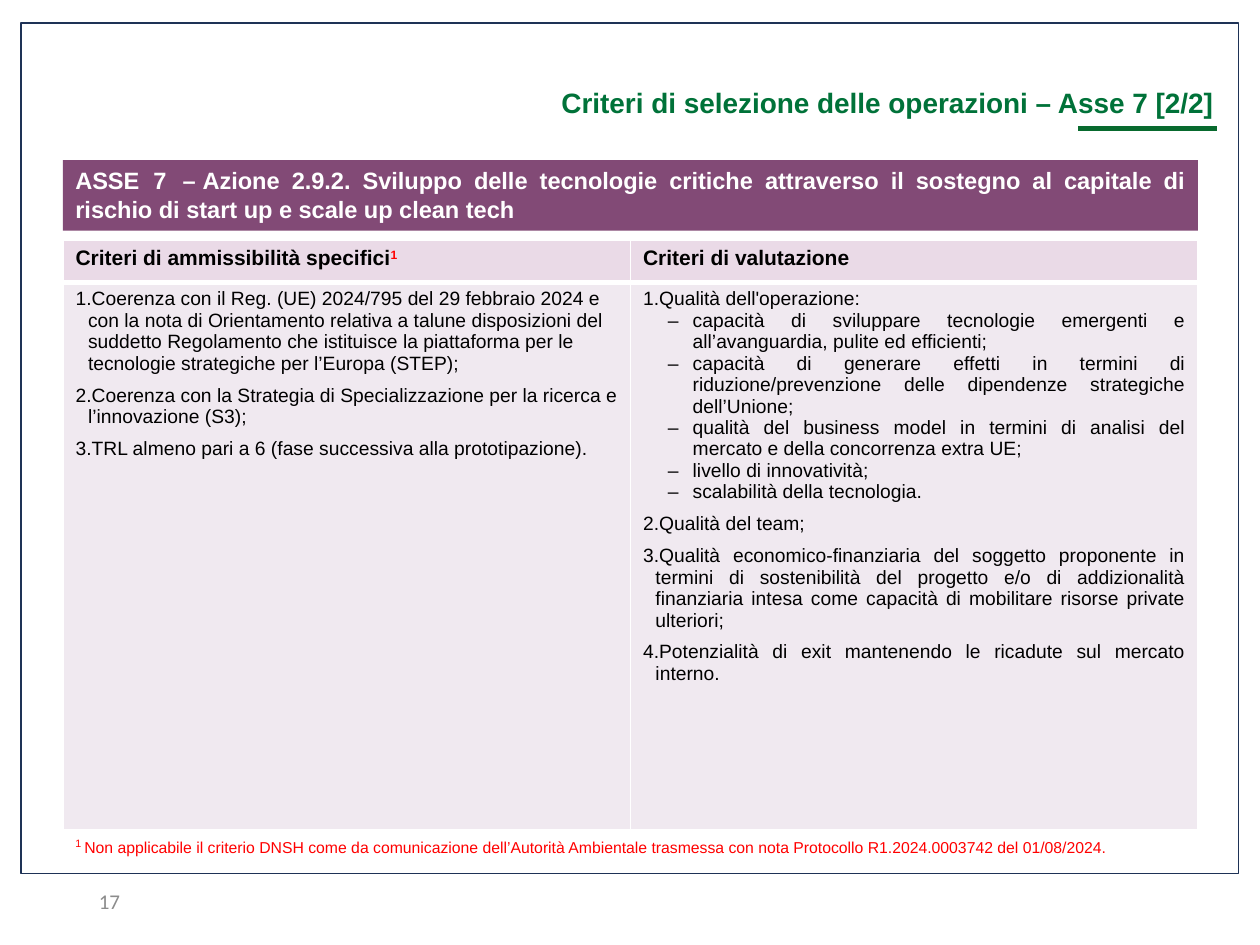
from lxml import etree
from pptx import Presentation
from pptx.dml.color import RGBColor
from pptx.enum.shapes import MSO_CONNECTOR, MSO_SHAPE
from pptx.enum.text import MSO_ANCHOR, PP_ALIGN
from pptx.oxml.ns import qn
from pptx.util import Cm, Pt

LEFT, RIGHT, JUST = PP_ALIGN.LEFT, PP_ALIGN.RIGHT, PP_ALIGN.JUSTIFY
TOP, MIDDLE = MSO_ANCHOR.TOP, MSO_ANCHOR.MIDDLE
RECT, LINE = MSO_SHAPE.RECTANGLE, MSO_CONNECTOR.STRAIGHT

COLORS = {
    "frame": "1E3256", "rule": "086A2E", "title": "007239", "band": "824A76",
    "head": "EADAE7", "body": "F0E9F0", "white": "FFFFFF", "black": "000000",
    "red": "FF0000", "gray": "8C8C8C",
}

# Criteria: (level, text, space after in points)
ENTRY = [
    (0, "Coerenza con il Reg. (UE) 2024/795 del 29 febbraio 2024 e con la nota di "
        "Orientamento relativa a talune disposizioni del suddetto Regolamento che "
        "istituisce la piattaforma per le tecnologie strategiche per l’Europa (STEP);", 6),
    (0, "Coerenza con la Strategia di Specializzazione per la ricerca e "
        "l’innovazione (S3);", 6),
    (0, "TRL almeno pari a 6 (fase successiva alla prototipazione).", 0),
]
RATING = [
    (0, "Qualità dell'operazione:", 0),
    (1, "capacità di sviluppare tecnologie emergenti e all’avanguardia, pulite ed "
        "efficienti;", 0),
    (1, "capacità di generare effetti in termini di riduzione/prevenzione delle "
        "dipendenze strategiche dell’Unione;", 0),
    (1, "qualità del business model in termini di analisi del mercato e della "
        "concorrenza extra UE;", 0),
    (1, "livello di innovatività;", 0),
    (1, "scalabilità della tecnologia.", 6),
    (0, "Qualità del team;", 6),
    (0, "Qualità economico-finanziaria del soggetto proponente in termini di "
        "sostenibilità del progetto e/o di addizionalità finanziaria intesa come "
        "capacità di mobilitare risorse private ulteriori;", 6),
    (0, "Potenzialità di exit mantenendo le ricadute sul mercato interno.", 0),
]


def color(name):
    return RGBColor.from_string(COLORS[name])


def style(para, size, tone, bold=False, align=LEFT, face="Arial"):
    para.alignment = align
    font = para.font
    font.name, font.size, font.bold = face, Pt(size), bold
    font.color.rgb = color(tone)


def add_run(para, text, **attrs):
    run = para.add_run()
    run.text = text
    for key, value in attrs.items():
        run._r.get_or_add_rPr().set(key, str(value))
    return run


def add_text(slide, box, anchor=TOP):
    frame = slide.shapes.add_textbox(*map(Cm, box)).text_frame
    frame.word_wrap = True
    frame.vertical_anchor = anchor
    return frame.paragraphs[0]


def add_rect(slide, box):
    shape = slide.shapes.add_shape(RECT, *map(Cm, box))
    shape.shadow.inherit = False
    return shape


def draw_frame(slide, box):
    x, y, w, h = box
    edge = add_rect(slide, box)
    edge.fill.background()
    edge.line.color.rgb = color("frame")
    edge.line.width = Pt(1)
    # Page number under the frame
    para = add_text(slide, (x, y + h + 0.04, 2.24, 1.02), MIDDLE)
    style(para, 12, "gray", align=RIGHT, face="Calibri")
    add_run(para, "17")


def draw_title(slide, box):
    x, y, w, h = box
    para = add_text(slide, box)
    style(para, 16, "title", True, RIGHT)
    add_run(para, "Criteri di selezione delle operazioni – Asse 7 [2/2]")
    # Short rule below the right end
    end, base = x + w - 0.18, y + h + 0.05
    rule = slide.shapes.add_connector(LINE, Cm(end - 2.8), Cm(base), Cm(end), Cm(base))
    rule.line.color.rgb = color("rule")
    rule.line.width = Pt(3)
    etree.SubElement(rule._element.spPr, qn("a:effectLst"))


def draw_band(slide, box):
    band = add_rect(slide, box)
    band.fill.solid()
    band.fill.fore_color.rgb = color("band")
    band.line.fill.background()
    frame = band.text_frame
    frame.word_wrap = True
    frame.vertical_anchor = TOP
    para = frame.paragraphs[0]
    style(para, 13.5, "white", True, JUST)
    add_run(para, "ASSE")
    add_run(para, " 7 ", spc=110)
    add_run(para, "–", spc=400)
    add_run(para, "Azione 2.9.2. Sviluppo delle tecnologie critiche attraverso il "
                  "sostegno al capitale di rischio di start up e scale up clean tech")


def paint_cell(cell, tone, base):
    props = cell._tc.get_or_add_tcPr()
    for side, width in (("L", 1), ("R", 1), ("T", 1), ("B", base)):
        edge = etree.SubElement(props, qn(f"a:ln{side}"), w=str(Pt(width)))
        fill = etree.SubElement(edge, qn("a:solidFill"))
        etree.SubElement(fill, qn("a:srgbClr"), val=COLORS["white"])
    cell.fill.solid()
    cell.fill.fore_color.rgb = color(tone)


def fill_list(cell, items, align):
    frame = cell.text_frame
    nested = False
    for i, (level, text, after) in enumerate(items):
        para = frame.add_paragraph() if i else frame.paragraphs[0]
        para.space_after = Pt(after)
        props = para._p.get_or_add_pPr()
        left, hang = ((0.25, 0.25), (1.0, 0.5))[level]
        props.set("marL", str(Cm(left)))
        props.set("indent", str(-Cm(hang)))
        etree.SubElement(props, qn("a:buFont"), typeface="Arial")
        if level:
            nested = True
            etree.SubElement(props, qn("a:buChar"), char="–")
        else:
            mark = etree.SubElement(props, qn("a:buAutoNum"), type="arabicPeriod")
            if nested:  # numbering resumes after the sublist
                mark.set("startAt", "2")
        style(para, 11, "black", align=align)
        add_run(para, text)


def draw_table(slide, box):
    x, y, w, h = box
    table = slide.shapes.add_table(2, 2, *map(Cm, box)).table
    table.first_row = table.horz_banding = False
    for col in table.columns:
        col.width = Cm(w / 2)
    head = 0.84
    table.rows[0].height, table.rows[1].height = Cm(head), Cm(h - head)
    parts = (("Criteri di ammissibilità specifici", ENTRY, LEFT),
             ("Criteri di valutazione", RATING, JUST))
    for i, (name, items, align) in enumerate(parts):
        top, body = table.cell(0, i), table.cell(1, i)
        paint_cell(top, "head", 3)
        paint_cell(body, "body", 1)
        para = top.text_frame.paragraphs[0]
        style(para, 12, "black", True)
        add_run(para, name)
        if i == 0:  # footnote mark
            mark = add_run(para, "1", baseline=30000)
            mark.font.color.rgb = color("red")
        fill_list(body, items, align)


def draw_note(slide, box):
    para = add_text(slide, box)
    style(para, 9, "red")
    add_run(para, "1 ", baseline=30000).font.size = Pt(10.5)
    add_run(para, "Non applicabile il criterio DNSH come da comunicazione dell’Autorità "
                  "Ambientale trasmessa con nota Protocollo R1.2024.0003742 del 01/08/2024.")


def main():
    deck = Presentation()
    deck.slide_width, deck.slide_height = Cm(25.4), Cm(19.05)
    slide = deck.slides.add_slide(deck.slide_layouts[6])
    x, w = 1.27, 22.88
    draw_frame(slide, (0.43, 0.46, 24.54, 17.15))
    draw_title(slide, (5.82, 1.6, 18.9, 0.94))
    draw_table(slide, (x, 4.85, w, 11.88))
    draw_band(slide, (x, 3.23, w, 1.42))
    draw_note(slide, (x, 16.71, w, 0.64))
    deck.save("out.pptx")


if __name__ == "__main__":
    main()
